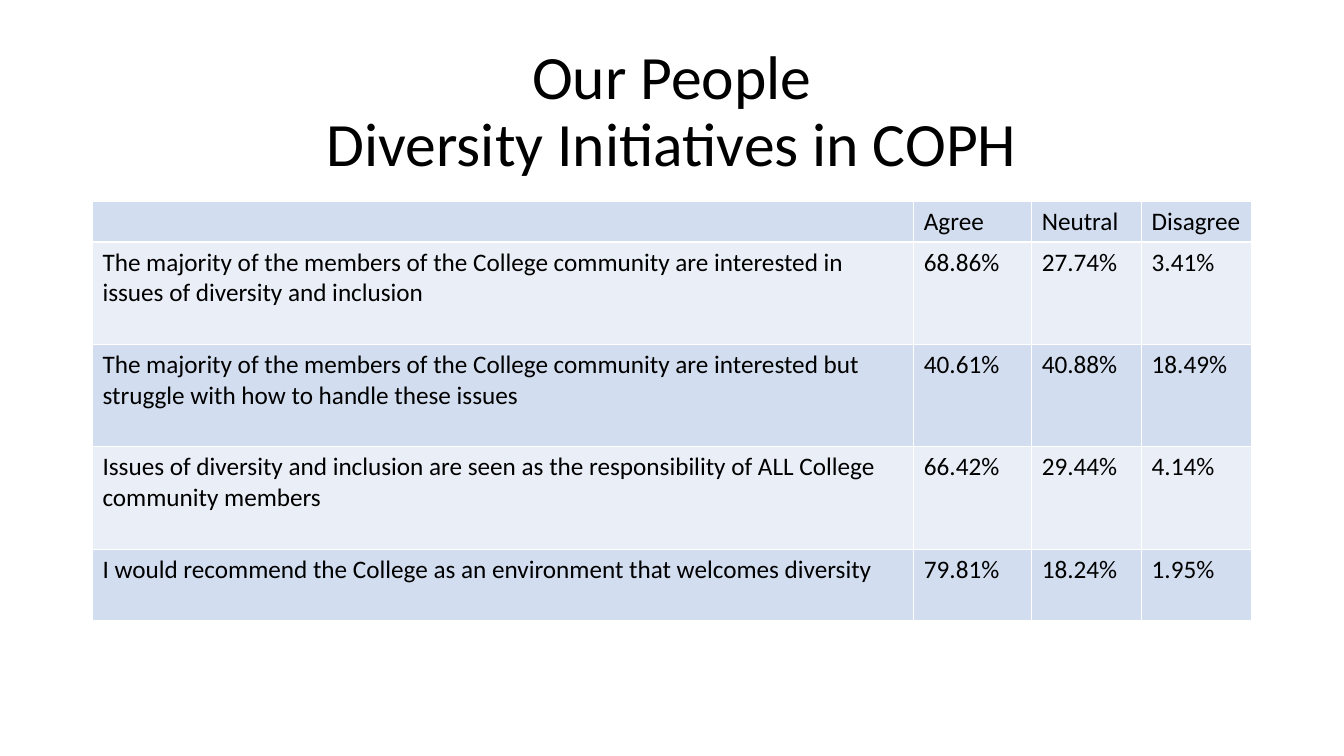
from lxml.etree import SubElement
from pptx import Presentation
from pptx.dml.color import RGBColor
from pptx.enum.text import MSO_ANCHOR, PP_ALIGN
from pptx.oxml.ns import qn
from pptx.util import Cm, Pt

TITLE_LINES = ["Our People", "Diversity Initiatives in COPH"]
SURVEY_ROWS = [
    ("", "Agree", "Neutral", "Disagree"),
    ("The majority of the members of the College community are interested in issues of diversity and inclusion",
     "68.86%", "27.74%", "3.41%"),
    ("The majority of the members of the College community are interested but struggle with how to handle these issues",
     "40.61%", "40.88%", "18.49%"),
    ("Issues of diversity and inclusion are seen as the responsibility of ALL College community members",
     "66.42%", "29.44%", "4.14%"),
    ("I would recommend the College as an environment that welcomes diversity",
     "79.81%", "18.24%", "1.95%"),
]
COLUMN_WIDTHS = [20.7, 2.97, 2.77, 2.77]
ROW_HEIGHTS = [1.02, 2.58, 2.58, 2.58, 1.79]
COLORS = {"text": "000000", "border": "FFFFFF", "dark_band": "D2DEEF", "light_band": "EAEFF7"}
BANDS = ["dark_band", "light_band"]
FONT = "Calibri"
LEFT, CONTENT_WIDTH = 2.33, 29.21
TITLE_TOP, TITLE_HEIGHT = 1.01, 3.68
TABLE_TOP = 5.08


def write_text(text_frame, lines, size=18, align=PP_ALIGN.LEFT, spacing=1.0):
    paragraph = text_frame.paragraphs[0]
    paragraph.alignment = align
    paragraph.line_spacing = spacing
    paragraph.font.size = Pt(size)
    for index, line in enumerate(lines):
        if index:
            paragraph.add_line_break()
        run = paragraph.add_run()
        run.text = line
        run.font.name = FONT
        run.font.size = Pt(size)
        run.font.color.rgb = RGBColor.from_string(COLORS["text"])


def style_cell(cell, band):
    properties = cell._tc.get_or_add_tcPr()
    for side in ("lnL", "lnR", "lnT", "lnB"):
        line = SubElement(properties, qn(f"a:{side}"), w=str(Pt(1)))
        fill = SubElement(line, qn("a:solidFill"))
        SubElement(fill, qn("a:srgbClr"), val=COLORS["border"])
    cell.fill.solid()
    cell.fill.fore_color.rgb = RGBColor.from_string(COLORS[band])


def add_title(slide):
    box = slide.shapes.add_textbox(Cm(LEFT), Cm(TITLE_TOP), Cm(CONTENT_WIDTH), Cm(TITLE_HEIGHT))
    box.text_frame.word_wrap = True
    box.text_frame.vertical_anchor = MSO_ANCHOR.MIDDLE
    write_text(box.text_frame, TITLE_LINES, size=44, align=PP_ALIGN.CENTER, spacing=0.9)


def add_survey_table(slide):
    frame = slide.shapes.add_table(
        len(SURVEY_ROWS), len(COLUMN_WIDTHS),
        Cm(LEFT), Cm(TABLE_TOP), Cm(CONTENT_WIDTH), Cm(sum(ROW_HEIGHTS)))
    table = frame.table
    table.first_row = False
    table.horz_banding = False
    for column, width in zip(table.columns, COLUMN_WIDTHS):
        column.width = Cm(width)
    for row_index, (row, height, texts) in enumerate(zip(table.rows, ROW_HEIGHTS, SURVEY_ROWS)):
        row.height = Cm(height)
        for cell, text in zip(row.cells, texts):
            style_cell(cell, BANDS[row_index % 2])
            write_text(cell.text_frame, [text] if text else [])


def main():
    presentation = Presentation()
    presentation.slide_width = Cm(33.87)
    presentation.slide_height = Cm(19.05)
    slide = presentation.slides.add_slide(presentation.slide_layouts[6])
    add_title(slide)
    add_survey_table(slide)
    presentation.save("out.pptx")


if __name__ == "__main__":
    main()
